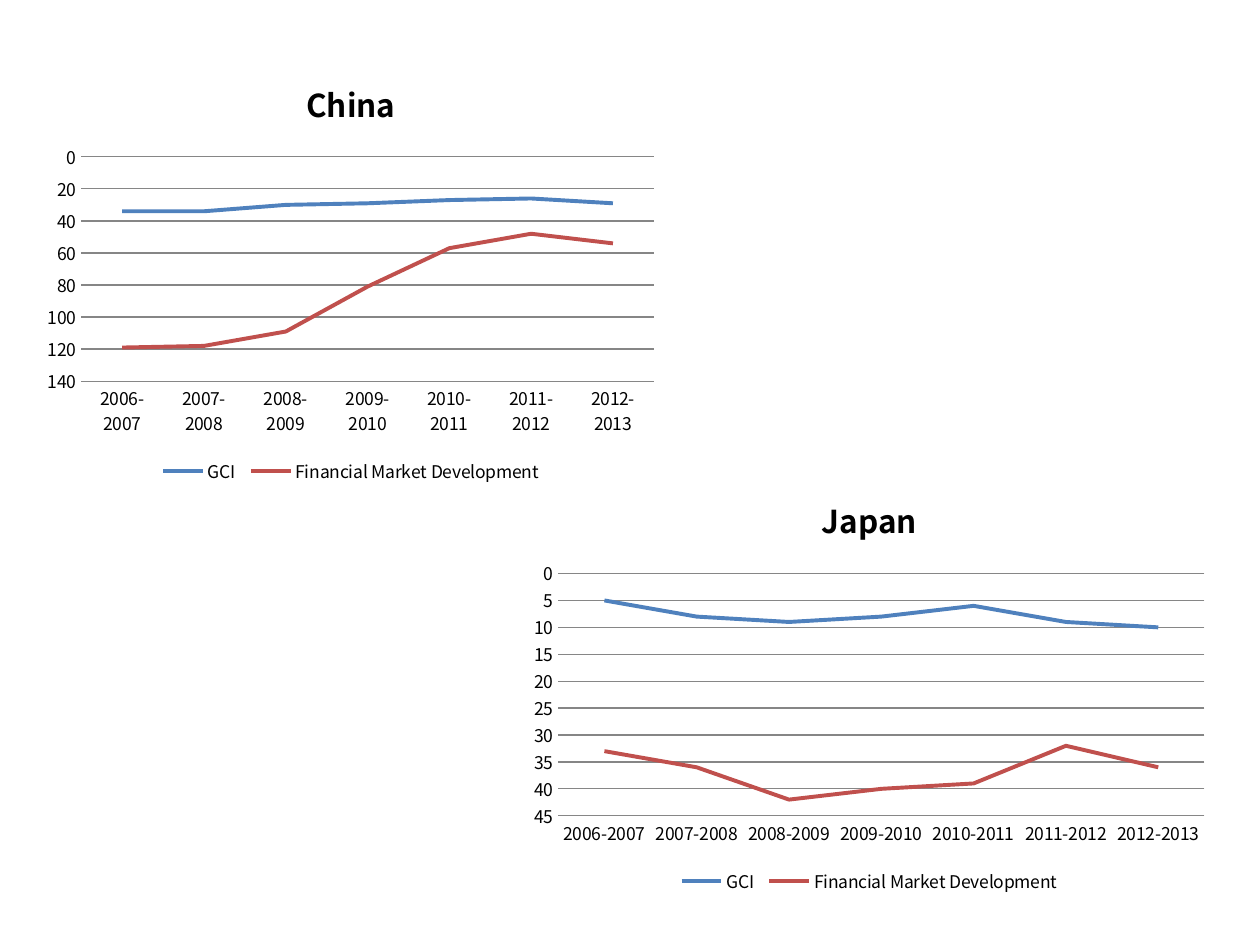
from pptx import Presentation
from pptx.chart.data import CategoryChartData
from pptx.dml.color import RGBColor
from pptx.enum.chart import XL_AXIS_CROSSES as Crosses
from pptx.enum.chart import XL_CHART_TYPE as ChartType
from pptx.enum.chart import XL_LEGEND_POSITION as LegendPosition
from pptx.enum.chart import XL_MARKER_STYLE as MarkerStyle
from pptx.enum.chart import XL_TICK_MARK as TickMark
from pptx.util import Inches, Pt

BLACK = RGBColor(0x00, 0x00, 0x00)
GRID_GRAY = RGBColor(0x86, 0x86, 0x86)
BLUE = RGBColor(0x4F, 0x81, 0xBD)
RED = RGBColor(0xC0, 0x50, 0x4D)
FONT = "Noto Sans CJK KR"

SEASONS = [f"{year}-{year + 1}" for year in range(2006, 2013)]
SERIES_STYLES = [("GCI ", BLUE), ("Financial Market Development", RED)]

# Country, box (left, top, width, height), axis maximum, axis step, ranks per series
COUNTRIES = [
    ("China", (0.28, 0.44, 5.01, 3.44), 140, 20,
     [(34, 34, 30, 29, 27, 26, 29), (119, 118, 109, 81, 57, 48, 54)]),
    ("Japan", (4.13, 3.75, 5.54, 3.38), 45, 5,
     [(5, 8, 9, 8, 6, 9, 10), (33, 36, 42, 40, 39, 32, 36)]),
]


def style_font(font, size, bold=False):
    font.name = FONT
    font.size = Pt(size)
    font.bold = bold
    font.color.rgb = BLACK


def style_axes(chart, maximum, step):
    # Rank axis: best rank on top, seasons along the bottom
    ranks = chart.value_axis
    ranks.minimum_scale = 0
    ranks.maximum_scale = maximum
    ranks.major_unit = step
    ranks.reverse_order = True
    ranks.crosses = Crosses.MAXIMUM
    ranks.format.line.fill.background()
    ranks.has_major_gridlines = True

    for axis in (ranks, chart.category_axis):
        axis.major_tick_mark = TickMark.NONE
        axis.minor_tick_mark = TickMark.NONE
    for line in (ranks.major_gridlines.format.line, chart.category_axis.format.line):
        line.color.rgb = GRID_GRAY
        line.width = Pt(0.75)


def add_rank_chart(slide, country, box, maximum, step, rank_rows):
    chart_data = CategoryChartData()
    chart_data.categories = SEASONS
    for (name, _), ranks in zip(SERIES_STYLES, rank_rows):
        chart_data.add_series(name, ranks)
    frame = slide.shapes.add_chart(ChartType.LINE, *map(Inches, box), chart_data)
    chart = frame.chart
    style_font(chart.font, 10)

    # Title
    chart.has_title = True
    title = chart.chart_title
    title.include_in_layout = False
    title.text_frame.text = country
    style_font(title.text_frame.paragraphs[0].runs[0].font, 18, bold=True)

    # Legend
    chart.has_legend = True
    chart.legend.position = LegendPosition.BOTTOM
    chart.legend.include_in_layout = False

    style_axes(chart, maximum, step)

    # Lines
    for series, (_, color) in zip(chart.plots[0].series, SERIES_STYLES):
        series.smooth = False
        series.marker.style = MarkerStyle.NONE
        series.format.line.color.rgb = color
        series.format.line.width = Pt(2.25)


def main():
    presentation = Presentation()
    presentation.slide_width = Inches(10)
    presentation.slide_height = Inches(7.5)
    slide = presentation.slides.add_slide(presentation.slide_layouts[6])
    for country in COUNTRIES:
        add_rank_chart(slide, *country)
    presentation.save("out.pptx")


if __name__ == "__main__":
    main()
